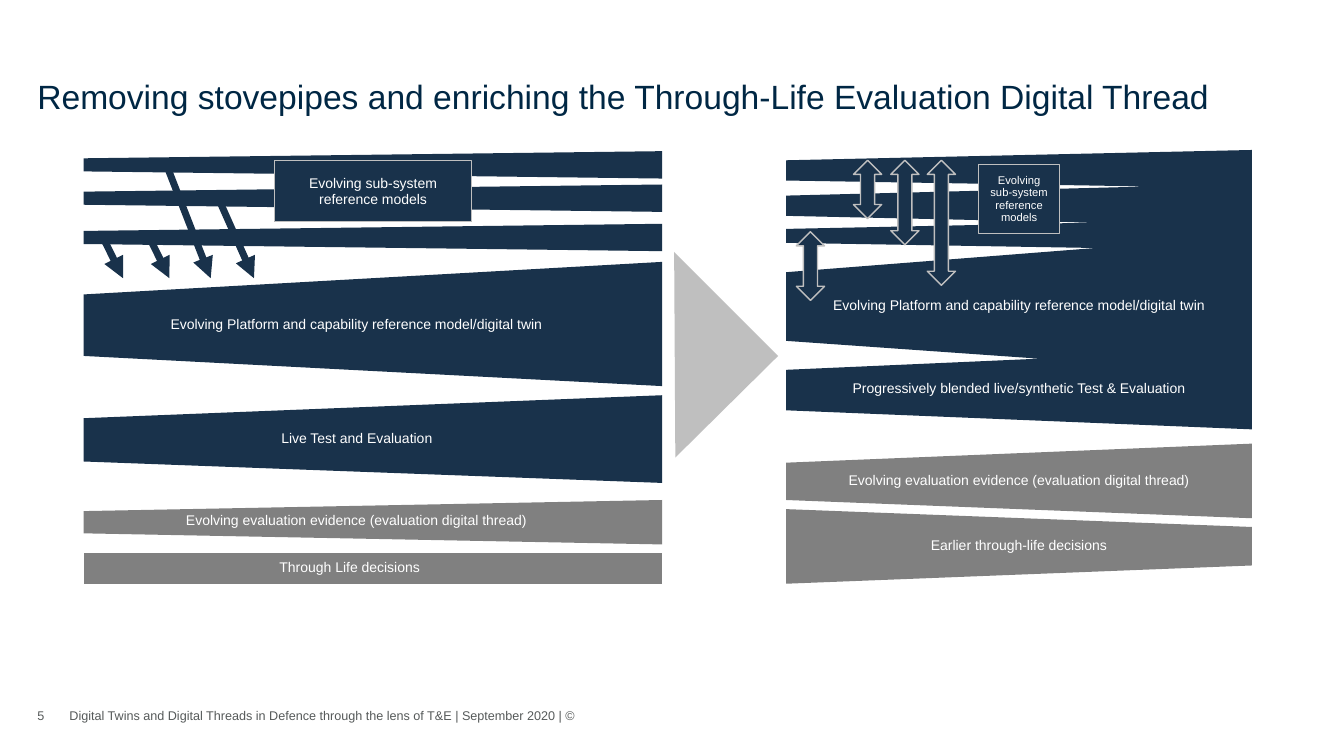
from dataclasses import dataclass

import pptx
import pptx.dml.color
import pptx.enum.shapes
import pptx.enum.text
import pptx.oxml
import pptx.oxml.ns
import pptx.util
from pptx.util import Cm

NAVY, GREY, SILVER, WHITE = "19324B", "808080", "BFBFBF", "FFFFFF"
TITLE_BLUE, FOOTER_GREY = "002744", "565A5A"
LEFT_START, LEFT_END = 2.11, 16.69
RIGHT_START, RIGHT_END = 19.81, 31.55
ANCHOR = pptx.enum.text.MSO_ANCHOR
ALIGN = pptx.enum.text.PP_ALIGN
SHAPE = pptx.enum.shapes.MSO_SHAPE


@dataclass
class Box:
    left: float
    top: float
    width: float
    height: float

    def lengths(self) -> list:
        return [Cm(value) for value in (self.left, self.top, self.width, self.height)]


@dataclass
class Outline:
    points: list
    colour: str


@dataclass
class Label:
    box: Box
    text: str
    size: float = 10
    line_spacing: float = 11.8
    framed: bool = False


@dataclass
class Arrow:
    start: tuple
    end: tuple


def band(start: float, end: float, start_top: float, end_top: float,
         end_bottom: float, start_bottom: float, colour: str = NAVY) -> Outline:
    """A tapered band between two x positions."""
    return Outline([(start, start_top), (end, end_top),
                    (end, end_bottom), (start, start_bottom)], colour)


def rgb(colour: str) -> pptx.dml.color.RGBColor:
    return pptx.dml.color.RGBColor.from_string(colour)


def apply(target, values: dict) -> None:
    for name, value in values.items():
        setattr(target, name, value)


def paint(shape, fill: str, line: str = "", width: float = 0.75) -> None:
    shape.shadow.inherit = False
    shape.fill.solid()
    shape.fill.fore_color.rgb = rgb(fill)
    if line:
        shape.line.color.rgb = rgb(line)
        shape.line.width = pptx.util.Pt(width)
    else:
        shape.line.fill.background()


def write(shape, text: str, size: float, colour: str, anchor=ANCHOR.MIDDLE,
          alignment=ALIGN.LEFT, line_spacing: float = 0) -> None:
    frame = shape.text_frame
    apply(frame, {"word_wrap": True, "vertical_anchor": anchor,
                  "auto_size": pptx.enum.text.MSO_AUTO_SIZE.NONE,
                  "margin_left": 0, "margin_right": 0,
                  "margin_top": 0, "margin_bottom": 0})
    paragraph = frame.paragraphs[0]
    paragraph.text = text
    paragraph.alignment = alignment
    if line_spacing:
        paragraph.line_spacing = pptx.util.Pt(line_spacing)
    for run in paragraph.runs:
        apply(run.font, {"name": "Arial", "size": pptx.util.Pt(size), "bold": False})
        run.font.color.rgb = rgb(colour)


def draw_outline(slide, outline: Outline) -> None:
    points = [(Cm(x), Cm(y)) for x, y in outline.points]
    builder = slide.shapes.build_freeform(*points[0])
    builder.add_line_segments(points[1:], close=True)
    paint(builder.convert_to_shape(), outline.colour)


def draw_label(slide, label: Label) -> None:
    if label.framed:
        shape = slide.shapes.add_shape(SHAPE.RECTANGLE, *label.box.lengths())
        paint(shape, NAVY, SILVER)
    else:
        shape = slide.shapes.add_textbox(*label.box.lengths())
    write(shape, label.text, label.size, WHITE,
          alignment=ALIGN.CENTER, line_spacing=label.line_spacing)


def draw_arrow(slide, arrow: Arrow) -> None:
    ends = [Cm(value) for value in arrow.start + arrow.end]
    connector = slide.shapes.add_connector(pptx.enum.shapes.MSO_CONNECTOR.STRAIGHT, *ends)
    connector.line.color.rgb = rgb(NAVY)
    connector.line.width = pptx.util.Pt(5)
    head = pptx.oxml.parse_xml(f'<a:tailEnd {pptx.oxml.ns.nsdecls("a")} type="triangle"/>')
    connector.line._get_or_add_ln().append(head)
    effects = pptx.oxml.parse_xml(f'<a:effectLst {pptx.oxml.ns.nsdecls("a")}/>')
    connector._element.spPr.append(effects)


def draw_exchange(slide, box: Box) -> None:
    shape = slide.shapes.add_shape(SHAPE.UP_DOWN_ARROW, *box.lengths())
    paint(shape, NAVY, SILVER, 1)


# Blended thread: sub-systems, platform and test merge towards the right
BLENDED_THREAD = Outline([
    (RIGHT_END, 3.78), (RIGHT_END, 10.82), (RIGHT_START, 10.34), (RIGHT_START, 9.32),
    (26.19, 9.04), (RIGHT_START, 8.59), (RIGHT_START, 6.86),
    (27.61, 6.25), (RIGHT_START, 6.12), (RIGHT_START, 5.77),
    (27.58, 5.61), (RIGHT_START, 5.44), (RIGHT_START, 4.93),
    (28.96, 4.7), (RIGHT_START, 4.55), (RIGHT_START, 4.04)], NAVY)

SUBSYSTEM_OFFSETS = (0, 0.84, 1.83)
OUTLINES = [
    BLENDED_THREAD,
    band(RIGHT_START, RIGHT_END, 11.66, 11.18, 13.06, 12.6, GREY),
    band(RIGHT_START, RIGHT_END, 12.83, 13.28, 14.25, 14.71, GREY),
    band(LEFT_START, LEFT_END, 12.88, 12.6, 13.72, 13.44, GREY),
    band(LEFT_START, LEFT_END, 10.54, 9.96, 12.17, 11.63),
    band(LEFT_START, LEFT_END, 7.42, 6.6, 9.73, 8.97),
    band(LEFT_START, LEFT_END, 13.94, 13.94, 14.71, 14.71, GREY),
    *[band(LEFT_START, LEFT_END, 3.99 + offset, 3.81 + offset, 4.5 + offset, 4.32 + offset)
      for offset in SUBSYSTEM_OFFSETS],
    Outline([(17.02, 11.53), (16.99, 6.35), (19.61, 8.97)], SILVER),
]

PLATFORM = "Evolving Platform and capability reference model/digital twin"
EVIDENCE = "Evolving evaluation evidence (evaluation digital thread)"
LABELS = [
    Label(Box(24.66, 4.14, 2.05, 1.75), "Evolving\nsub-system\nreference\nmodels", 8, 8.8, True),
    Label(Box(RIGHT_START, 6.83, 11.73, 1.73), PLATFORM),
    Label(Box(RIGHT_START, 8.74, 11.73, 2.08),
          "Progressively blended live/synthetic Test & Evaluation"),
    Label(Box(RIGHT_START, 11.07, 11.73, 2.08), EVIDENCE),
    Label(Box(RIGHT_START, 12.7, 11.73, 2.08), "Earlier through-life decisions"),
    Label(Box(6.91, 4.04, 4.98, 1.55), "Evolving sub-system\nreference models", framed=True),
    Label(Box(2.08, 6.58, 13.79, 3.15), PLATFORM),
    Label(Box(2.08, 9.93, 13.82, 2.24), "Live Test and Evaluation"),
    Label(Box(2.08, 11.99, 13.79, 2.24), EVIDENCE),
    Label(Box(2.08, 13.18, 13.46, 2.24), "Through Life decisions"),
]

FEED_END = 7.01
FEEDS = [
    Arrow((4.19, 4.14), (5.31, FEED_END)),
    Arrow((5.46, 4.9), (6.4, FEED_END)),
    Arrow((2.54, 5.87), (3.1, FEED_END)),
    Arrow((3.71, 5.87), (4.27, FEED_END)),
]

EXCHANGES = [
    Box(23.37, 4.04, 0.71, 3.15),
    Box(22.45, 4.04, 0.71, 2.13),
    Box(21.51, 4.04, 0.71, 1.47),
    Box(20.07, 5.84, 0.71, 1.73),
]

FOOTERS = [
    (Box(0.94, 17.78, 0.79, 0.51), "5"),
    (Box(1.75, 17.78, 13.16, 0.51),
     "Digital Twins and Digital Threads in Defence through the lens of T&E | September 2020 | ©"),
]


def main() -> None:
    presentation = pptx.Presentation()
    apply(presentation, {"slide_width": Cm(33.87), "slide_height": Cm(19.05)})
    slide = presentation.slides.add_slide(presentation.slide_layouts[5])

    # Title and footer
    title = slide.shapes.title
    apply(title, dict(zip(("left", "top", "width", "height"),
                          Box(0.94, 1.5, 31.98, 1.42).lengths())))
    write(title, "Removing stovepipes and enriching the Through-Life Evaluation Digital Thread",
          24, TITLE_BLUE, ANCHOR.BOTTOM)
    for box, text in FOOTERS:
        write(slide.shapes.add_textbox(*box.lengths()), text, 9, FOOTER_GREY)

    # Threads, their labels and the arrows between them
    for draw, items in ((draw_outline, OUTLINES), (draw_label, LABELS),
                        (draw_arrow, FEEDS), (draw_exchange, EXCHANGES)):
        for item in items:
            draw(slide, item)

    presentation.save("out.pptx")


if __name__ == "__main__":
    main()
